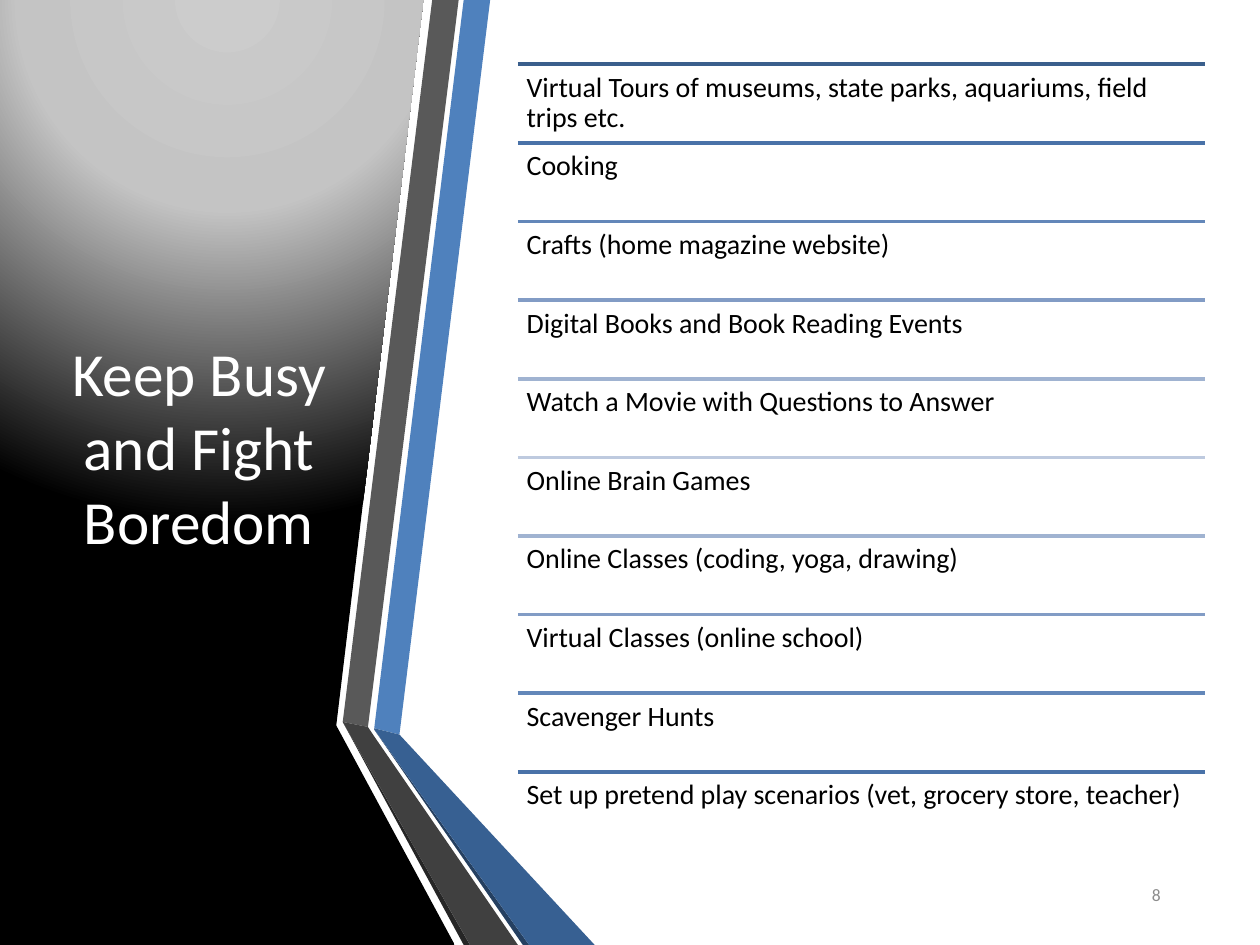
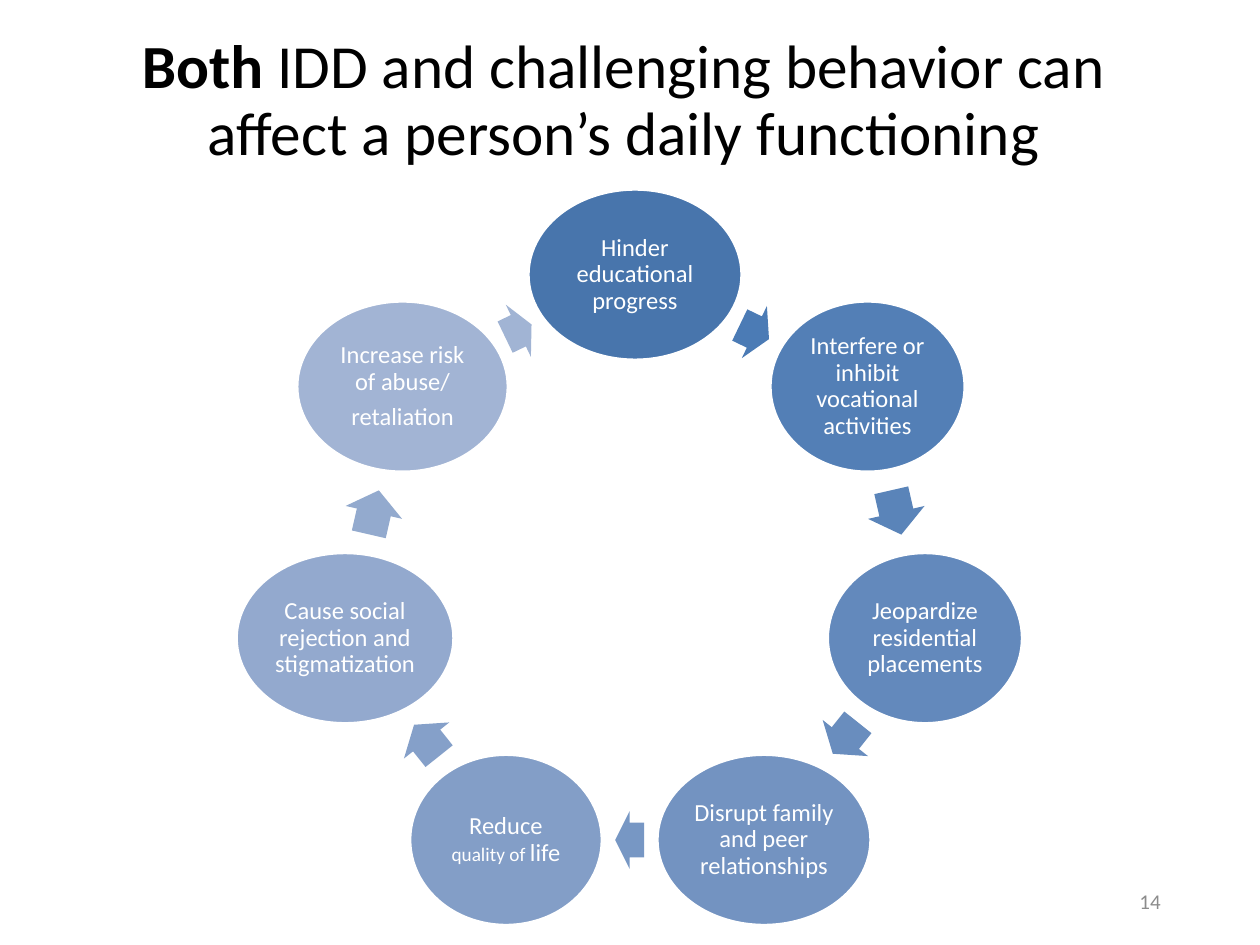
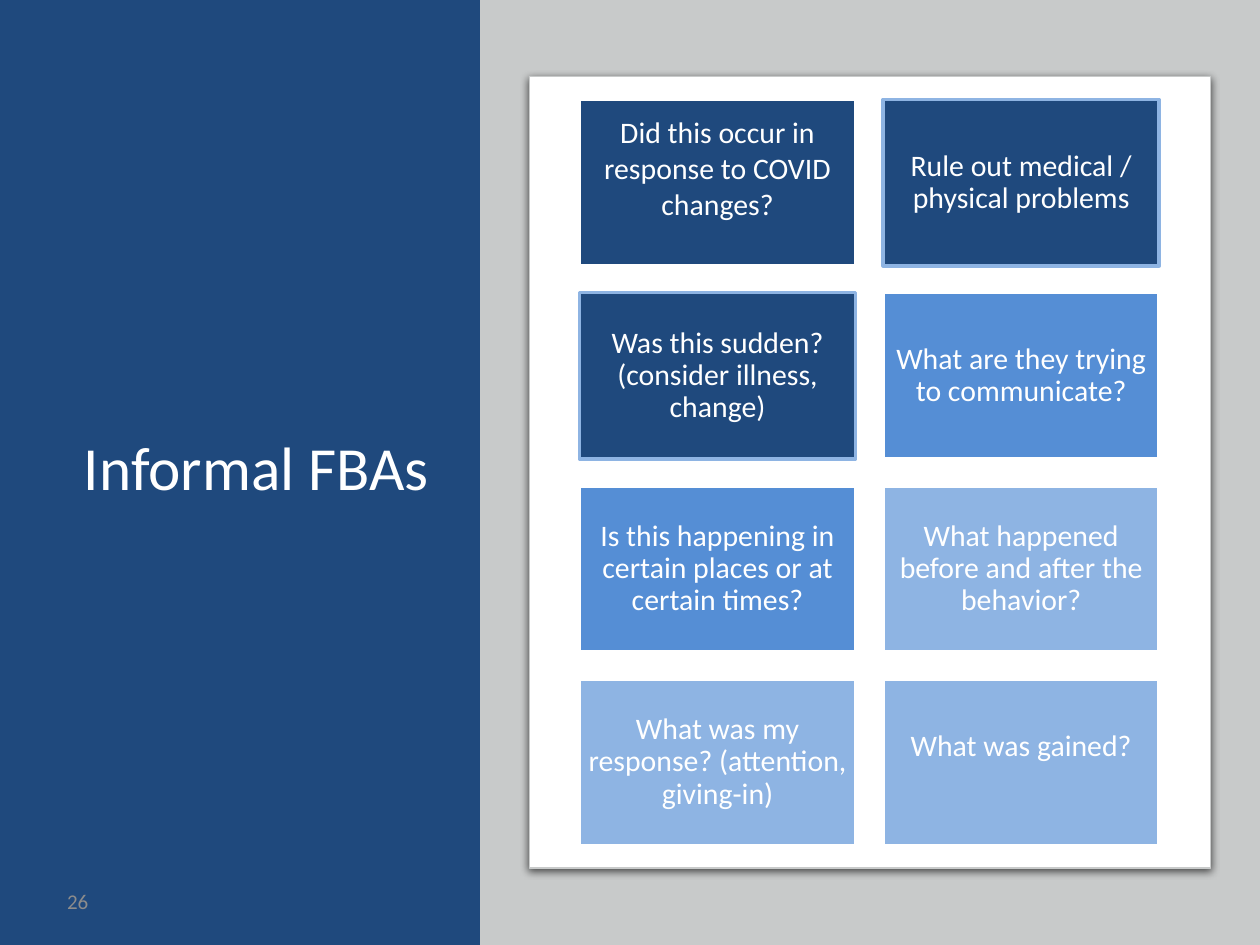
from math import cos, hypot, radians, sin

from pptx import Presentation
from pptx.dml.color import RGBColor
from pptx.enum.shapes import MSO_CONNECTOR, MSO_SHAPE
from pptx.enum.text import MSO_ANCHOR, MSO_AUTO_SIZE, PP_ALIGN
from pptx.oxml import parse_xml
from pptx.oxml.ns import nsdecls
from pptx.util import Inches, Pt

# Shared style
FONT = "Calibri"
WHITE = RGBColor(0xFF, 0xFF, 0xFF)
BLACK = RGBColor(0x00, 0x00, 0x00)
NUMBER_GRAY = RGBColor(0x8C, 0x8C, 0x8C)
BACKDROP_GRAY = RGBColor(0xC8, 0xCA, 0xCA)
NAVY = RGBColor(0x1F, 0x49, 0x7D)
MID_BLUE = RGBColor(0x55, 0x8E, 0xD5)
PALE_BLUE = RGBColor(0x8E, 0xB4, 0xE3)
BAND_BLUE = RGBColor(0x4F, 0x81, 0xBD)
BAND_BLUE_DARK = RGBColor(0x37, 0x60, 0x92)
BAND_BLUE_EDGE = RGBColor(0x25, 0x40, 0x61)
BAND_GRAY = RGBColor(0x59, 0x59, 0x59)
BAND_GRAY_DARK = RGBColor(0x40, 0x40, 0x40)
BAND_GRAY_EDGE = RGBColor(0x26, 0x26, 0x26)

TITLE_FRAME = {"word_wrap": True, "auto_size": MSO_AUTO_SIZE.NONE,
               "vertical_anchor": MSO_ANCHOR.MIDDLE}
LEFT, CENTER, RIGHT = PP_ALIGN.LEFT, PP_ALIGN.CENTER, PP_ALIGN.RIGHT

# Slide 1: folded bands beside the title panel
PANEL_OUTLINE = [(2.64, 0), (3.36, 0), (2.67, 5.75), (2.67, 5.76), (3.61, 7.5),
                 (0, 7.5), (0, 0)]
BANDS = [
    (BAND_BLUE, [(2.97, 5.78), (3.17, 5.83), (3.89, 0), (3.68, 0)]),
    (BAND_GRAY, [(3.64, 0), (3.43, 0), (2.72, 5.73), (2.92, 5.77)]),
    (BAND_GRAY_EDGE, [(2.72, 5.73), (3.68, 7.5), (3.73, 7.5)]),
    (BAND_BLUE_EDGE, [(2.97, 5.79), (4.15, 7.5), (4.2, 7.5)]),
    (BAND_BLUE_DARK, [(2.97, 5.79), (4.2, 7.5), (4.72, 7.5), (3.17, 5.83), (2.97, 5.78)]),
    (BAND_GRAY_DARK, [(4.11, 7.5), (2.96, 5.83), (2.92, 5.77), (2.72, 5.73), (3.73, 7.5)]),
]
ACTIVITIES = [
    "Virtual Tours of museums, state parks, aquariums, field trips etc.",
    "Cooking",
    "Crafts (home magazine website)",
    "Digital Books and Book Reading Events",
    "Watch a Movie with Questions to Answer",
    "Online Brain Games",
    "Online Classes (coding, yoga, drawing)",
    "Virtual Classes (online school)",
    "Scavenger Hunts",
    "Set up pretend play scenarios (vet, grocery store, teacher)",
]
RULE_TINTS = ["3A5F8C", "4972A8", "6387B9", "829CC5", "A0B3D1", "BECADF"]

# Slide 2: paragraphs, bubble width, bubble colour, colour of the next arrow
EFFECTS = [
    (["Hinder educational progress"], 1.7, "4875AC", "4B7BB5"),
    (["Interfere or inhibit vocational activities"], 1.55, "537FB6", "5A84B9"),
    (["Jeopardize residential placements"], 1.55, "6389BC", "698DBE"),
    (["Disrupt family and peer relationships"], 1.7, "7393C1", "7797C4"),
    ([[("Reduce", {}), (" quality of ", {"size": Pt(11)}), ("life", {})]],
     1.53, "839EC7", "85A0C9"),
    (["Cause social rejection and stigmatization"], 1.73, "93A9CE", "93AACE"),
    (["Increase risk of abuse/", "retaliation"], 1.68, "A2B4D4", "A1B4D4"),
]
BUBBLE_HEIGHT = 1.36

# Slide 3: question, fill, border, extra room below the text
QUESTIONS = [
    ("Did this occur in response to COVID changes?", NAVY, WHITE, 0.24),
    ("Rule out medical / physical problems", NAVY, PALE_BLUE, 0),
    ("Was this sudden? (consider illness, change)", NAVY, PALE_BLUE, 0),
    ("What are they trying to communicate?", MID_BLUE, WHITE, 0),
    ("Is this happening in certain places or at certain times?", MID_BLUE, WHITE, 0),
    ("What happened before and after the behavior?", PALE_BLUE, WHITE, 0),
    ("What was my response? (attention, giving-in)", PALE_BLUE, WHITE, 0),
    ("What was gained?", PALE_BLUE, WHITE, 0.28),
]


def apply_format(target, values):
    for attribute, value in values.items():
        setattr(target, attribute, value)


def box(*lengths):
    return [Inches(length) for length in lengths]


def write_text(frame, paragraphs, size, color, align, spacing=None, after=0):
    """Each paragraph is a string or a list of (text, font values) runs."""
    for index, content in enumerate(paragraphs):
        paragraph = frame.paragraphs[0] if index == 0 else frame.add_paragraph()
        apply_format(paragraph, {"alignment": align, "line_spacing": spacing,
                                 "space_after": Pt(after)})
        for text, extra in [(content, {})] if isinstance(content, str) else content:
            run = paragraph.add_run()
            run.text = text
            apply_format(run.font, {"name": FONT, "size": Pt(size), **extra})
            run.font.color.rgb = color


def set_frame(frame, inset, anchor=MSO_ANCHOR.MIDDLE, extra_bottom=0):
    apply_format(frame, {
        "word_wrap": True, "vertical_anchor": anchor,
        "margin_left": Inches(inset), "margin_right": Inches(inset),
        "margin_top": Inches(inset), "margin_bottom": Inches(inset + extra_bottom)})


def paint(shape, fill, border=None, width=2):
    shape.shadow.inherit = False
    shape.fill.solid()
    shape.fill.fore_color.rgb = fill
    if border is None:
        shape.line.fill.background()
    else:
        shape.line.color.rgb = border
        shape.line.width = Pt(width)


def add_block(slide, kind, position, fill, border=None, width=2):
    block = slide.shapes.add_shape(kind, *box(*position))
    paint(block, fill, border, width)
    return block


def add_outline(slide, points, fill):
    corners = [box(*point) for point in points]
    builder = slide.shapes.build_freeform(*corners[0])
    builder.add_line_segments(corners[1:], close=True)
    outline = builder.convert_to_shape()
    paint(outline, fill)
    return outline


def add_rule(slide, left, right, y, color):
    rule = slide.shapes.add_connector(MSO_CONNECTOR.STRAIGHT, *box(left, y, right, y))
    rule.line.color.rgb = color
    rule.line.width = Pt(2)
    rule._element.spPr.append(parse_xml(f"<a:effectLst {nsdecls('a')}/>"))


def add_text_box(slide, position):
    return slide.shapes.add_textbox(*box(*position)).text_frame


def start_slide(deck, background):
    slide = deck.slides.add_slide(deck.slide_layouts[5])
    slide.background.fill.solid()
    slide.background.fill.fore_color.rgb = background
    return slide


def set_title(slide, content, position, color, spacing=None):
    title = slide.shapes.title
    apply_format(title, dict(zip(("left", "top", "width", "height"), box(*position))))
    apply_format(title.text_frame, TITLE_FRAME)
    write_text(title.text_frame, [content], 35, color, CENTER, spacing)
    # Bring the title in front of the panel
    slide.shapes._spTree.append(title._element)


def add_slide_number(slide, number, position, size=12):
    frame = add_text_box(slide, position)
    apply_format(frame, {"word_wrap": True, "vertical_anchor": MSO_ANCHOR.MIDDLE})
    write_text(frame, [number], size, NUMBER_GRAY, RIGHT)


def fade_panel(panel):
    stops = "".join(f'<a:gs pos="{place}000"><a:srgbClr val="{color}"/></a:gs>'
                    for place, color in [(0, "CCCCCC"), (40, "C4C4C4"), (100, "000000")])
    gradient = parse_xml(
        f'<a:gradFill {nsdecls("a")} rotWithShape="1"><a:gsLst>{stops}</a:gsLst>'
        '<a:path path="circle"><a:fillToRect l="50000" t="-80000" r="50000" b="180000"/>'
        "</a:path></a:gradFill>")
    properties = panel._element.spPr
    properties.replace(properties.find("{*}solidFill"), gradient)


def cast_shadow(card):
    effects = card._element.spPr.find("{*}effectLst")
    effects.append(parse_xml(
        f'<a:outerShdw {nsdecls("a")} blurRad="{Pt(4.5)}" dist="{Pt(1.5)}" dir="5400000" '
        'algn="ctr" rotWithShape="0"><a:srgbClr val="000000"><a:alpha val="63000"/>'
        "</a:srgbClr></a:outerShdw>"))


def build_activities(deck):
    slide = start_slide(deck, WHITE)
    fade_panel(add_outline(slide, PANEL_OUTLINE, BLACK))
    for color, points in BANDS:
        add_outline(slide, points, color)
    set_title(slide, "Keep Busy and Fight Boredom", (0.44, 0.75, 2.28, 5.58), WHITE)
    add_slide_number(slide, "8", (8.42, 6.9, 0.89, 0.4), 10)

    # Ruled list: tints run out to the palest and back
    left, top, width = 4.11, 0.51, 5.45
    row_height = 6.24 / len(ACTIVITIES)
    tints = RULE_TINTS + RULE_TINTS[-2:0:-1]
    for row, (activity, tint) in enumerate(zip(ACTIVITIES, tints)):
        y = top + row * row_height
        add_rule(slide, left, left + width, y, RGBColor.from_string(tint))
        frame = add_text_box(slide, (left, y, width, row_height))
        set_frame(frame, 0.07, MSO_ANCHOR.TOP)
        write_text(frame, [activity], 16, BLACK, LEFT, 0.9, 5.6)


def bubble_reach(width, angle):
    """Distance from a bubble's centre to its edge along an angle."""
    return 1 / hypot(cos(angle) / (width / 2), sin(angle) / (BUBBLE_HEIGHT / 2))


def build_effects_cycle(deck):
    slide = start_slide(deck, WHITE)
    title = [("Both", {"bold": True}),
             (" IDD and challenging behavior can affect a person’s daily functioning", {})]
    set_title(slide, title, (0.64, 0.19, 8.62, 1.24), BLACK, 0.9)
    add_slide_number(slide, "14", (7.06, 6.95, 2.25, 0.4))

    center_x, center_y, radius = 5.04, 4.54, 2.36
    step = 360 / len(EFFECTS)
    centers = [(center_x + radius * sin(radians(step * i)),
                center_y - radius * cos(radians(step * i))) for i in range(len(EFFECTS))]
    for i, (paragraphs, width, fill, arrow_fill) in enumerate(EFFECTS):
        x, y = centers[i]
        bubble = add_block(slide, MSO_SHAPE.OVAL,
                           (x - width / 2, y - BUBBLE_HEIGHT / 2, width, BUBBLE_HEIGHT),
                           RGBColor.from_string(fill), WHITE)
        set_frame(bubble.text_frame, 0.02)
        write_text(bubble.text_frame, paragraphs, 14, WHITE, CENTER, 0.9, 4.9)

        # Arrow in the middle of the gap to the next bubble
        following = (i + 1) % len(EFFECTS)
        next_x, next_y = centers[following]
        turn = step * (i + 0.5)
        angle = radians(turn)
        gap_start = bubble_reach(width, angle)
        gap_end = hypot(next_x - x, next_y - y) - bubble_reach(EFFECTS[following][1], angle)
        middle = (gap_start + gap_end) / 2
        length, height = 0.53 * (gap_end - gap_start), 0.46
        arrow = add_block(slide, MSO_SHAPE.RIGHT_ARROW,
                          (x + middle * cos(angle) - length / 2,
                           y + middle * sin(angle) - height / 2, length, height),
                          RGBColor.from_string(arrow_fill))
        arrow.adjustments[0], arrow.adjustments[1] = 0.6, 0.5
        arrow.rotation = turn


def build_questions(deck):
    slide = start_slide(deck, NAVY)
    set_title(slide, "Informal FBAs", (0.53, 0.69, 3.01, 6.02), WHITE)
    add_block(slide, MSO_SHAPE.RECTANGLE, (3.81, 0, 6.19, 7.5), BACKDROP_GRAY)
    card = add_block(slide, MSO_SHAPE.ROUNDED_RECTANGLE, (4.2, 0.61, 5.41, 6.28),
                     WHITE, BACKDROP_GRAY, 0.75)
    card.adjustments[0] = 0
    cast_shadow(card)
    add_slide_number(slide, "26", (0.24, 6.95, 0.56, 0.4))

    # Two-column grid of questions
    width, height, gap = 2.19, 1.32, 0.22
    row_pitch = 4.6 / 3
    for i, (question, fill, border, extra_bottom) in enumerate(QUESTIONS):
        row, column = divmod(i, 2)
        tile = add_block(slide, MSO_SHAPE.RECTANGLE,
                         (4.6 + column * (width + gap), 0.79 + row * row_pitch,
                          width, height), fill, border)
        set_frame(tile.text_frame, 0.07, extra_bottom=extra_bottom)
        write_text(tile.text_frame, [question], 17, WHITE, CENTER,
                   1.0 if extra_bottom else 0.9)


def main():
    deck = Presentation()
    deck.slide_width, deck.slide_height = box(10, 7.5)
    build_activities(deck)
    build_effects_cycle(deck)
    build_questions(deck)
    deck.save("out.pptx")


if __name__ == "__main__":
    main()
